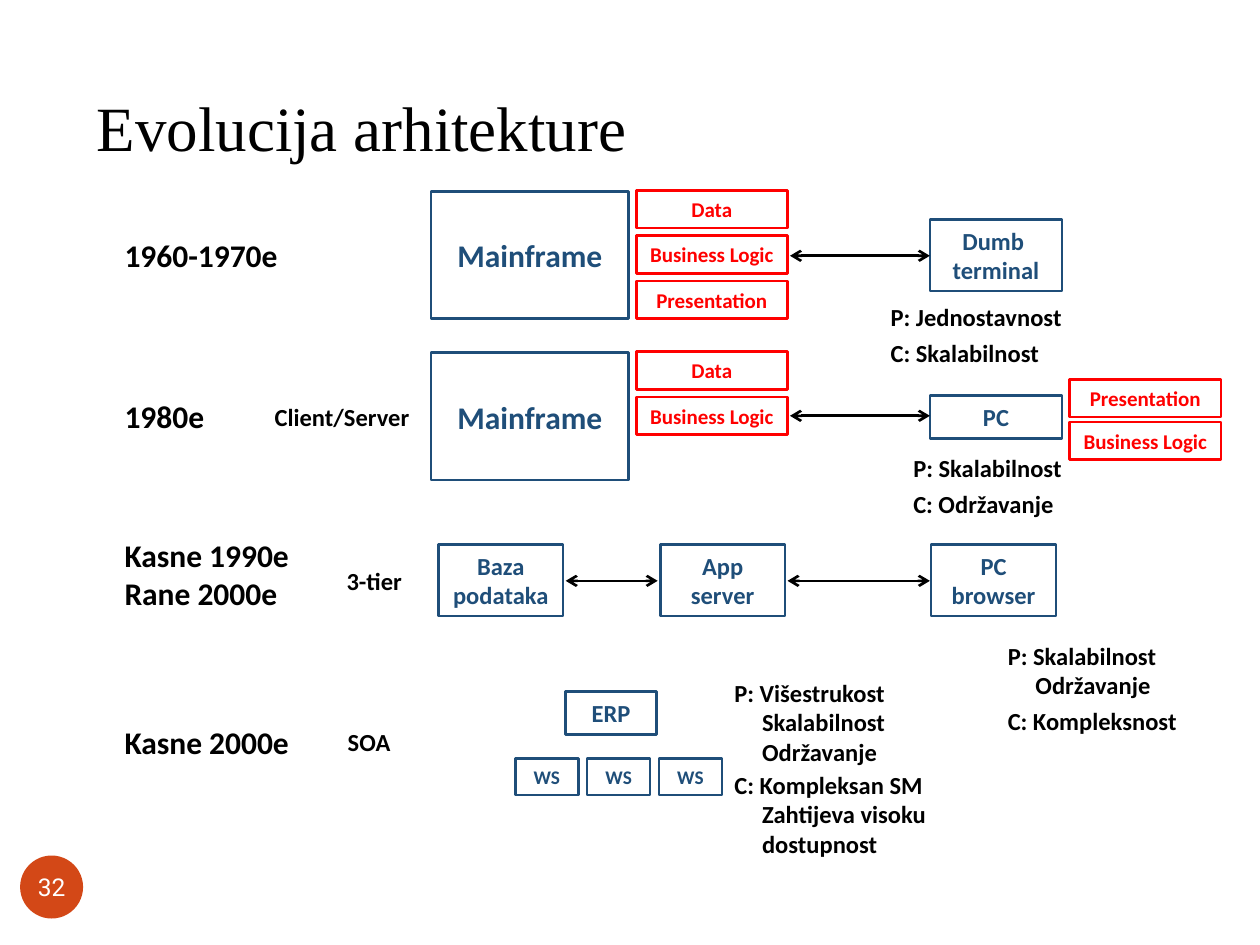
from lxml.etree import SubElement
from pptx import Presentation
from pptx.dml.color import RGBColor
from pptx.enum.shapes import MSO_CONNECTOR, MSO_SHAPE
from pptx.enum.text import MSO_ANCHOR, PP_ALIGN
from pptx.oxml.ns import qn
from pptx.util import Inches, Pt

COLORS = {"black": "000000", "blue": "1F4E79", "red": "FF0000",
          "orange": "D34817", "white": "FFFFFF"}


def color(name):
    return RGBColor.from_string(COLORS[name])


class SlideBuilder:
    font_name = "Calibri"
    line_width = Pt(1.5)
    hanging = Inches(0.22)

    def __init__(self, page):
        self.page = page

    def fill_text(self, shape, lines, size, ink, align=PP_ALIGN.LEFT, bold=True, font=None, indent=0):
        frame = shape.text_frame
        frame.word_wrap = True
        frame.vertical_anchor = MSO_ANCHOR.MIDDLE
        for index, line in enumerate(lines):
            paragraph = frame.paragraphs[0] if index == 0 else frame.add_paragraph()
            paragraph.text = line
            paragraph.alignment = align
            if index and indent:
                paragraph._p.get_or_add_pPr().set("marL", str(indent))
            paragraph.font.name = font or self.font_name
            paragraph.font.size = Pt(size)
            paragraph.font.bold = bold
            paragraph.font.color.rgb = color(ink)
        return frame

    def text(self, left, top, width, height, *lines, size=14, **style):
        box = self.page.shapes.add_textbox(Inches(left), Inches(top), Inches(width), Inches(height))
        return self.fill_text(box, lines, size, "black", **style)

    def title(self, line):
        frame = self.text(0.67, 0.67, 9, 0.74, line, size=36, bold=False, font="Times New Roman")
        frame.paragraphs[0].line_spacing = 0.9

    def remark(self, left, top, *lines):
        self.text(left, top, 1.94, 0.1 + 0.24 * len(lines), *lines, indent=self.hanging)

    def box(self, left, top, width, height, *lines, size=14, ink="blue"):
        shape = self.page.shapes.add_shape(
            MSO_SHAPE.RECTANGLE, Inches(left), Inches(top), Inches(width), Inches(height))
        shape.shadow.inherit = False
        shape.fill.background()
        shape.line.color.rgb = color(ink)
        shape.line.width = self.line_width
        self.fill_text(shape, lines, size, ink, align=PP_ALIGN.CENTER)

    def layer(self, left, top, name):
        self.box(left, top, 1.2, 0.3, name, size=12, ink="red")

    def arrow(self, start, end, height):
        connector = self.page.shapes.add_connector(
            MSO_CONNECTOR.STRAIGHT, Inches(start), Inches(height), Inches(end), Inches(height))
        connector.line.color.rgb = color("black")
        connector.line.width = self.line_width
        outline = connector.line._get_or_add_ln()
        for end_tag in ("a:headEnd", "a:tailEnd"):
            SubElement(outline, qn(end_tag), type="arrow")
        SubElement(connector._element.spPr, qn("a:effectLst"))

    def page_number(self, number):
        circle = self.page.shapes.add_shape(
            MSO_SHAPE.OVAL, Inches(0.16), Inches(6.79), Inches(0.5), Inches(0.5))
        circle.shadow.inherit = False
        circle.fill.solid()
        circle.fill.fore_color.rgb = color("orange")
        circle.line.fill.background()
        frame = self.fill_text(circle, [number], 14, "white", PP_ALIGN.CENTER, False, "Roboto")
        frame.margin_left = frame.margin_right = frame.margin_top = frame.margin_bottom = 0
        frame.word_wrap = False


def main():
    deck = Presentation()
    deck.slide_width, deck.slide_height = Inches(10), Inches(7.5)
    slide = SlideBuilder(deck.slides.add_slide(deck.slide_layouts[6]))
    slide.title("Evolucija arhitekture")
    slide.page_number("32")

    for top, height, lines in (
        (1.82, 0.4, ["1960-1970e"]),
        (3.1, 0.4, ["1980e"]),
        (4.2, 0.71, ["Kasne 1990e", "Rane 2000e"]),
        (5.69, 0.4, ["Kasne 2000e"]),
    ):
        slide.text(0.89, top, 1.57, height, *lines, size=18)

    for left, top, width, name in (
        (2.06, 3.14, 1.31, "Client/Server"),
        (2.46, 4.44, 1.02, "3-tier"),
        (2.58, 5.72, 0.7, "SOA"),
    ):
        slide.text(left, top, width, 0.34, name, align=PP_ALIGN.CENTER)

    for top, layers in (
        (1.52, ["Data", "Business Logic", "Presentation"]),
        (2.8, ["Data", "Business Logic"]),
    ):
        slide.box(3.42, top, 1.57, 1.01, "Mainframe", size=18)
        for index, name in enumerate(layers):
            slide.layer(5.05, top - 0.01 + 0.36 * index, name)
    for index, name in enumerate(["Presentation", "Business Logic"]):
        slide.layer(8.49, 3.01 + 0.34 * index, name)

    slide.box(7.38, 1.74, 1.05, 0.57, "Dumb ", "terminal")
    slide.box(7.38, 3.14, 1.05, 0.34, "PC")
    for left, lines in (
        (3.48, ["Baza", "podataka"]),
        (5.24, ["App", "server"]),
        (7.39, ["PC browser"]),
    ):
        slide.box(left, 4.32, 0.99, 0.57, *lines)
    slide.box(4.49, 5.49, 0.72, 0.34, "ERP")
    for index in range(3):
        slide.box(4.09 + 0.57 * index, 6.02, 0.5, 0.29, "WS", size=11)

    for start, end, height in (
        (6.27, 7.38, 2.03), (6.27, 7.38, 3.3), (4.49, 5.22, 4.61), (6.25, 7.38, 4.61),
    ):
        slide.arrow(start, end, height)

    for left, top, lines in (
        (6.97, 2.34, ["P: Jednostavnost"]),
        (6.97, 2.63, ["C: Skalabilnost"]),
        (7.15, 3.54, ["P: Skalabilnost"]),
        (7.15, 3.83, ["C: Održavanje"]),
        (7.9, 5.03, ["P: Skalabilnost", "Održavanje"]),
        (7.9, 5.55, ["C: Kompleksnost"]),
        (5.73, 5.32, ["P: Višestrukost", "Skalabilnost", "Održavanje"]),
        (5.73, 6.05, ["C: Kompleksan SM", "Zahtijeva visoku", "dostupnost"]),
    ):
        slide.remark(left, top, *lines)

    deck.save("out.pptx")


if __name__ == "__main__":
    main()
